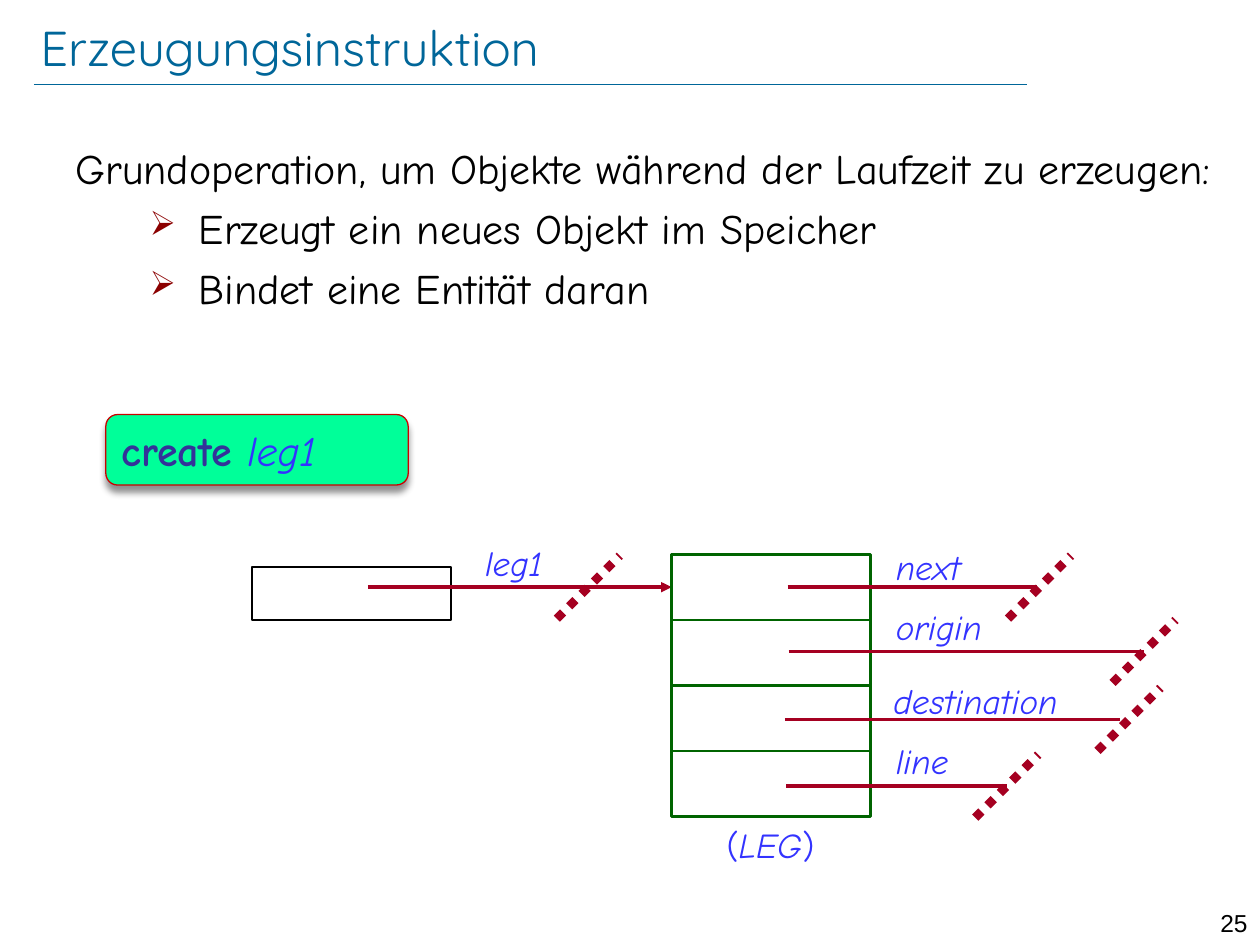
import lxml.etree
import pptx
import pptx.dml.color
import pptx.enum.dml
import pptx.enum.shapes
import pptx.enum.text
import pptx.oxml.ns
import pptx.util

Inches = pptx.util.Inches
RGBColor = pptx.dml.color.RGBColor
Align = pptx.enum.text.PP_ALIGN
Shape = pptx.enum.shapes.MSO_SHAPE

TEAL = RGBColor(0x00, 0x66, 0x99)
BLACK = RGBColor(0x00, 0x00, 0x00)
BLUE = RGBColor(0x33, 0x33, 0xFF)
INDIGO = RGBColor(0x33, 0x33, 0x99)
GREEN = RGBColor(0x00, 0x64, 0x00)
MINT = RGBColor(0x00, 0xFF, 0x99)
RED = RGBColor(0xCC, 0x00, 0x00)
CRIMSON = RGBColor(0xA5, 0x00, 0x21)
DARK_RED = RGBColor(0x8B, 0x00, 0x00)


def add_element(parent, tag, **attributes):
    return lxml.etree.SubElement(parent, pptx.oxml.ns.qn(tag), attributes)


class SlideBuilder:
    TITLE = {"name": "Quicksand", "size": pptx.util.Pt(28)}
    BODY = {"name": "Comic Neue", "size": pptx.util.Pt(24)}
    LABEL = {"name": "Comic Neue", "size": pptx.util.Pt(20)}
    NUMBER = {"name": "Arial", "size": pptx.util.Pt(14)}

    def __init__(self, slide):
        self.slide = slide

    def styled_run(self, paragraph, text, style, color, **extra):
        run = paragraph.add_run()
        run.text = text
        for attribute, value in {**style, **extra}.items():
            setattr(run.font, attribute, value)
        run.font.color.rgb = color

    def text_box(self, left, top, width, height, align=Align.LEFT, **frame_format):
        box = self.slide.shapes.add_textbox(
            Inches(left), Inches(top), Inches(width), Inches(height))
        frame = box.text_frame
        for attribute, value in {"word_wrap": True, **frame_format}.items():
            setattr(frame, attribute, value)
        frame.paragraphs[0].alignment = align
        return frame

    def label(self, text, left, top, width, height):
        frame = self.text_box(left, top, width, height, margin_left=Inches(0.18))
        self.styled_run(frame.paragraphs[0], text, self.LABEL, BLUE, italic=True)

    def bullet(self, frame, text):
        paragraph = frame.add_paragraph()
        properties = paragraph._p.get_or_add_pPr()
        properties.set("marL", str(Inches(0.98)))
        properties.set("indent", str(Inches(-0.39)))
        color = add_element(properties, "a:buClr")
        add_element(color, "a:srgbClr", val=str(DARK_RED))
        add_element(properties, "a:buSzPct", val="80000")
        add_element(properties, "a:buChar", char="➢")
        paragraph.level = 1
        paragraph.space_before = pptx.util.Pt(5.5)
        self.styled_run(paragraph, text, self.BODY, BLACK)

    def box(self, kind, left, top, width, height, color, weight, fill=None):
        shape = self.slide.shapes.add_shape(
            kind, Inches(left), Inches(top), Inches(width), Inches(height))
        shape.shadow.inherit = False
        shape.line.color.rgb = color
        shape.line.width = pptx.util.Pt(weight)
        if fill is None:
            shape.fill.background()
        else:
            shape.fill.solid()
            shape.fill.fore_color.rgb = fill
        return shape

    def code_box(self, left, top, width, height, keyword, entity):
        shape = self.box(Shape.ROUNDED_RECTANGLE, left, top, width, height, RED, 0.75, MINT)
        effects = shape._element.spPr.find(pptx.oxml.ns.qn("a:effectLst"))
        distance = str(pptx.util.Pt(4))
        shadow = add_element(effects, "a:outerShdw", blurRad=distance, dist=distance,
                             dir="5400000", rotWithShape="0")
        shade = add_element(shadow, "a:srgbClr", val=str(BLACK))
        add_element(shade, "a:alpha", val="43000")
        shape.text_frame.vertical_anchor = pptx.enum.text.MSO_ANCHOR.TOP
        paragraph = shape.text_frame.paragraphs[0]
        paragraph.alignment = Align.LEFT
        self.styled_run(paragraph, keyword + " ", self.BODY, INDIGO, bold=True)
        self.styled_run(paragraph, entity, self.BODY, BLUE, italic=True)

    def line(self, start, end, color=CRIMSON, weight=2, dash=None, arrow=False):
        connector = self.slide.shapes.add_connector(
            pptx.enum.shapes.MSO_CONNECTOR.STRAIGHT,
            *(Inches(value) for value in (*start, *end)))
        connector.line.color.rgb = color
        connector.line.width = pptx.util.Pt(weight)
        if dash is not None:
            connector.line.dash_style = dash
        if arrow:
            outline = connector._element.spPr.find(pptx.oxml.ns.qn("a:ln"))
            add_element(outline, "a:tailEnd", type="triangle")
        add_element(connector._element.spPr, "a:effectLst")

    def slash(self, x, y, reach=0.25):
        self.line((x - reach, y + reach), (x + reach, y - reach), weight=5,
                  dash=pptx.enum.dml.MSO_LINE.ROUND_DOT)


def main():
    presentation = pptx.Presentation()
    presentation.slide_width = Inches(10)
    presentation.slide_height = Inches(7.5)
    builder = SlideBuilder(presentation.slides.add_slide(presentation.slide_layouts[6]))

    builder.line((0.27, 0.67), (8.15, 0.67), TEAL, 0.25)
    page_number = builder.text_box(9.45, 7.16, 0.55, 0.24, Align.RIGHT)
    builder.styled_run(page_number.paragraphs[0], "25", builder.NUMBER, BLACK)

    no_margins = dict.fromkeys(
        ("margin_left", "margin_top", "margin_right", "margin_bottom"), 0)
    title = builder.text_box(0.32, 0.12, 8.24, 0.5, **no_margins,
                             vertical_anchor=pptx.enum.text.MSO_ANCHOR.MIDDLE)
    builder.styled_run(title.paragraphs[0], "Erzeugungsinstruktion", builder.TITLE, TEAL)

    body = builder.text_box(0.5, 1.08, 9.25, 1.64)
    builder.styled_run(body.paragraphs[0],
                       "Grundoperation, um Objekte während der Laufzeit zu erzeugen:",
                       builder.BODY, BLACK)
    for effect in ("Erzeugt ein neues Objekt im Speicher", "Bindet eine Entität daran"):
        builder.bullet(body, effect)

    builder.code_box(0.84, 3.29, 2.4, 0.56, "create", "leg1")

    builder.box(Shape.RECTANGLE, 2, 4.5, 1.58, 0.42, BLACK, 1.5)
    builder.label("leg1", 3.67, 4.25, 1.33, 0.43)
    builder.line((2.92, 4.66), (5.33, 4.66), arrow=True)
    builder.slash(4.67, 4.66)

    fields = (
        ("next", 6.93, 4.28, 1.33, 6.25, 8.23, 4.66, 8.25),
        ("origin", 6.93, 4.76, 1.33, 6.26, 9.08, 5.17, 9.08),
        ("destination", 6.91, 5.34, 1.98, 6.23, 8.89, 5.71, 8.96),
        ("line", 6.93, 5.82, 1.33, 6.24, 7.99, 6.24, 7.99),
    )
    for row, (name, left, top, width, start, end, y, void) in enumerate(fields):
        builder.box(Shape.RECTANGLE, 5.33, 4.4 + 0.52 * row, 1.58, 0.52, GREEN, 1.5)
        builder.label(name, left, top, width, 0.43)
        builder.line((start, y), (end, y))
        builder.slash(void, y)

    class_name = builder.text_box(5.32, 6.49, 1.59, 0.43, Align.CENTER)
    for text, italic in (("(", False), ("LEG", True), (")", False)):
        builder.styled_run(class_name.paragraphs[0], text, builder.LABEL, BLUE, italic=italic)

    presentation.save("out.pptx")


if __name__ == "__main__":
    main()
